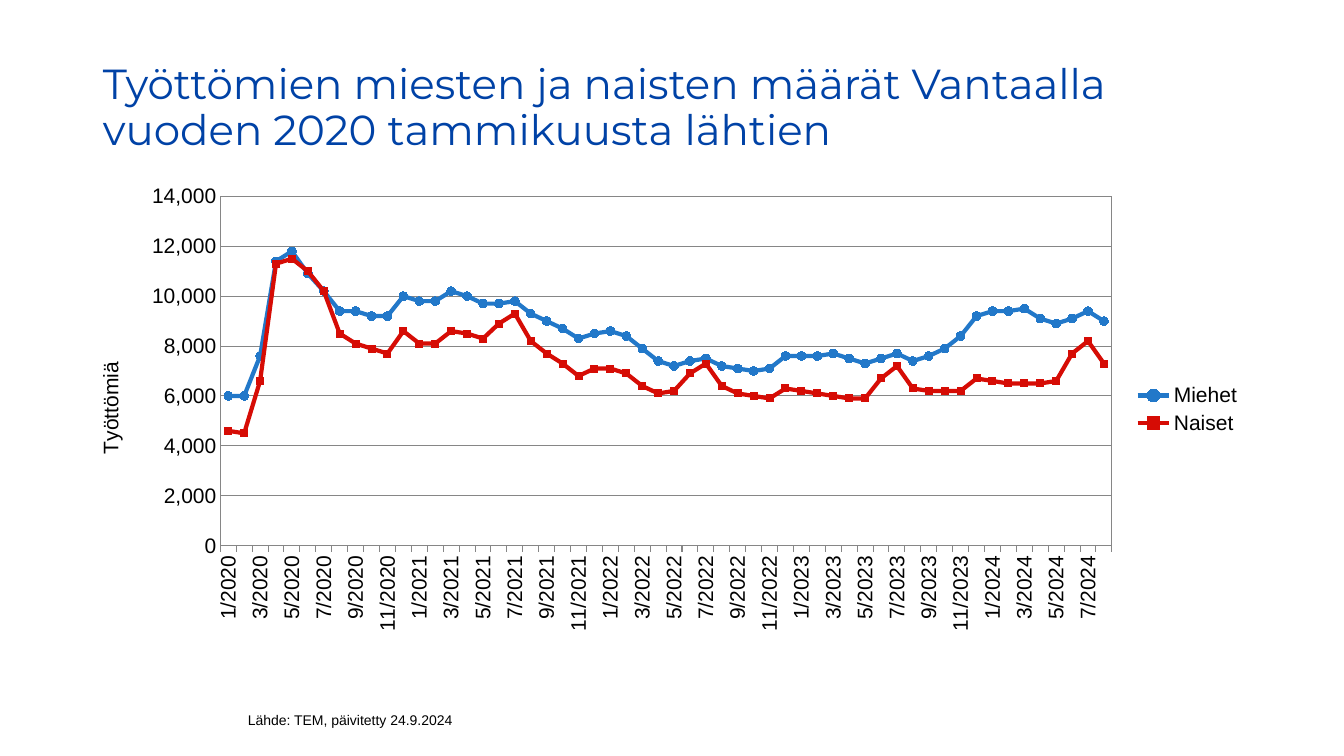
import pptx
import pptx.chart.data
import pptx.dml.color
import pptx.enum.chart
import pptx.enum.text
import pptx.oxml
import pptx.oxml.ns
import pptx.util

Inches = pptx.util.Inches
Pt = pptx.util.Pt
qn = pptx.oxml.ns.qn

COLORS = {"title": "0042A6", "text": "000000", "grid": "868686",
          "men": "2278C9", "women": "D60C05"}
MEN = [6000, 6000, 7600, 11400, 11800, 10900, 10200, 9400, 9400, 9200, 9200, 10000,
       9800, 9800, 10200, 10000, 9700, 9700, 9800, 9300, 9000, 8700, 8300, 8500,
       8600, 8400, 7900, 7400, 7200, 7400, 7500, 7200, 7100, 7000, 7100, 7600,
       7600, 7600, 7700, 7500, 7300, 7500, 7700, 7400, 7600, 7900, 8400, 9200,
       9400, 9400, 9500, 9100, 8900, 9100, 9400, 9000]
WOMEN = [4600, 4500, 6600, 11300, 11500, 11000, 10200, 8500, 8100, 7900, 7700, 8600,
         8100, 8100, 8600, 8500, 8300, 8900, 9300, 8200, 7700, 7300, 6800, 7100,
         7100, 6900, 6400, 6100, 6200, 6900, 7300, 6400, 6100, 6000, 5900, 6300,
         6200, 6100, 6000, 5900, 5900, 6700, 7200, 6300, 6200, 6200, 6200, 6700,
         6600, 6500, 6500, 6500, 6600, 7700, 8200, 7300]
MONTHS = [f"{i % 12 + 1}/{2020 + i // 12}" for i in range(len(MEN))]


def rgb(name):
    return pptx.dml.color.RGBColor.from_string(COLORS[name])


def set_font(font, size, color="text", face="Arial"):
    font.size = Pt(size)
    font.name = face
    font.bold = False
    font.color.rgb = rgb(color)


def write_text(frame, text, size, color="text", face="Arial", spacing=None):
    paragraph = frame.paragraphs[0]
    if spacing:
        paragraph.line_spacing = spacing
        paragraph.alignment = pptx.enum.text.PP_ALIGN.LEFT
    run = paragraph.add_run()
    run.text = text
    set_font(run.font, size, color, face)


def chart_xml(body):
    return pptx.oxml.parse_xml(body.replace(">", f" {pptx.oxml.ns.nsdecls('c', 'a')}>", 1))


class SlideBuilder:
    def __init__(self, slide, chart_size=15):
        self.slide = slide
        self.chart_size = chart_size

    def title(self, text, box):
        heading = self.slide.shapes.title
        heading.left, heading.top, heading.width, heading.height = map(Inches, box)
        frame = heading.text_frame
        frame.word_wrap = True
        frame.auto_size = pptx.enum.text.MSO_AUTO_SIZE.NONE
        frame.vertical_anchor = pptx.enum.text.MSO_ANCHOR.TOP
        write_text(frame, text, 30, "title", "Montserrat", 0.9)

    def note(self, text, box):
        frame = self.slide.shapes.add_textbox(*map(Inches, box)).text_frame
        frame.word_wrap = True
        write_text(frame, text, 10)

    def line_chart(self, months, groups, axis_title, box, plot_box):
        data = pptx.chart.data.CategoryChartData(number_format="#,##0")
        data.categories = months
        for name, values, *_ in groups:
            data.add_series(name, values)
        chart = self.slide.shapes.add_chart(
            pptx.enum.chart.XL_CHART_TYPE.LINE_MARKERS, *map(Inches, box), data).chart
        chart.has_title = False
        set_font(chart.font, self.chart_size)
        chart.has_legend = True
        chart.legend.position = pptx.enum.chart.XL_LEGEND_POSITION.RIGHT
        chart.legend.include_in_layout = False
        set_font(chart.legend.font, self.chart_size)
        chart.plots[0].vary_by_categories = False
        for series, (_, _, color, marker, size) in zip(chart.plots[0].series, groups):
            self.style_series(series, color, marker, size)
        self.style_axes(chart, axis_title)
        self.style_plot_area(chart, plot_box)

    def style_series(self, series, color, marker, size):
        series.smooth = False
        series.format.line.color.rgb = rgb(color)
        series.format.line.width = Pt(3)
        series.marker.style = marker
        series.marker.size = size
        series.marker.format.fill.solid()
        series.marker.format.fill.fore_color.rgb = rgb(color)
        series.marker.format.line.color.rgb = rgb(color)

    def style_axes(self, chart, axis_title):
        ticks = pptx.enum.chart.XL_TICK_MARK
        months_axis, count_axis = chart.category_axis, chart.value_axis
        for axis, tick in ((months_axis, ticks.OUTSIDE), (count_axis, ticks.NONE)):
            axis.major_tick_mark = tick
            axis.minor_tick_mark = ticks.NONE
            set_font(axis.tick_labels.font, self.chart_size)
        count_axis.minimum_scale = 0
        count_axis.maximum_scale = 14000
        count_axis.major_unit = 2000
        count_axis.tick_labels.number_format = "#,##0"
        count_axis.tick_labels.number_format_is_linked = False
        count_axis.has_major_gridlines = True
        for line in (months_axis.format.line, count_axis.major_gridlines.format.line):
            line.color.rgb = rgb("grid")
            line.width = Pt(0.75)
        count_axis.format.line.fill.background()
        write_text(count_axis.axis_title.text_frame, axis_title, self.chart_size)
        category = chart._chartSpace.find(".//" + qn("c:catAx"))
        category.find(qn("c:txPr")).find(qn("a:bodyPr")).set("rot", "-5400000")
        category.find(qn("c:noMultiLvlLbl")).addprevious(chart_xml('<c:tickLblSkip val="2"></c:tickLblSkip>'))

    def style_plot_area(self, chart, plot_box):
        area = chart._chartSpace.find(".//" + qn("c:plotArea"))
        for layout in area.findall(qn("c:layout")):
            area.remove(layout)
        edges = "".join(f'<c:{key} val="{value}"/>' for key, value in zip("xywh", plot_box))
        area.insert(0, chart_xml(
            '<c:layout><c:manualLayout><c:layoutTarget val="inner"/>'
            '<c:xMode val="edge"/><c:yMode val="edge"/>'
            f'{edges}</c:manualLayout></c:layout>'))
        area.append(chart_xml(
            '<c:spPr><a:noFill/><a:ln w="9525"><a:solidFill>'
            f'<a:srgbClr val="{COLORS["grid"]}"/></a:solidFill></a:ln></c:spPr>'))


def main():
    deck = pptx.Presentation()
    deck.slide_width, deck.slide_height = Inches(13.33), Inches(7.5)
    builder = SlideBuilder(deck.slides.add_slide(deck.slide_layouts[5]))
    builder.title("Työttömien miesten ja naisten määrät Vantaalla vuoden 2020 tammikuusta lähtien",
                  (0.92, 0.58, 11.07, 1.09))
    builder.note("Lähde: TEM, päivitetty 24.9.2024", (2.36, 7.01, 4.61, 0.4))
    markers = pptx.enum.chart.XL_MARKER_STYLE
    builder.line_chart(
        MONTHS,
        [("Miehet", MEN, "men", markers.CIRCLE, 6),
         ("Naiset", WOMEN, "women", markers.SQUARE, 5)],
        "Työttömiä", (0.92, 1.78, 11.5, 4.56), (0.11, 0.037, 0.769, 0.76))
    deck.save("out.pptx")


if __name__ == "__main__":
    main()
